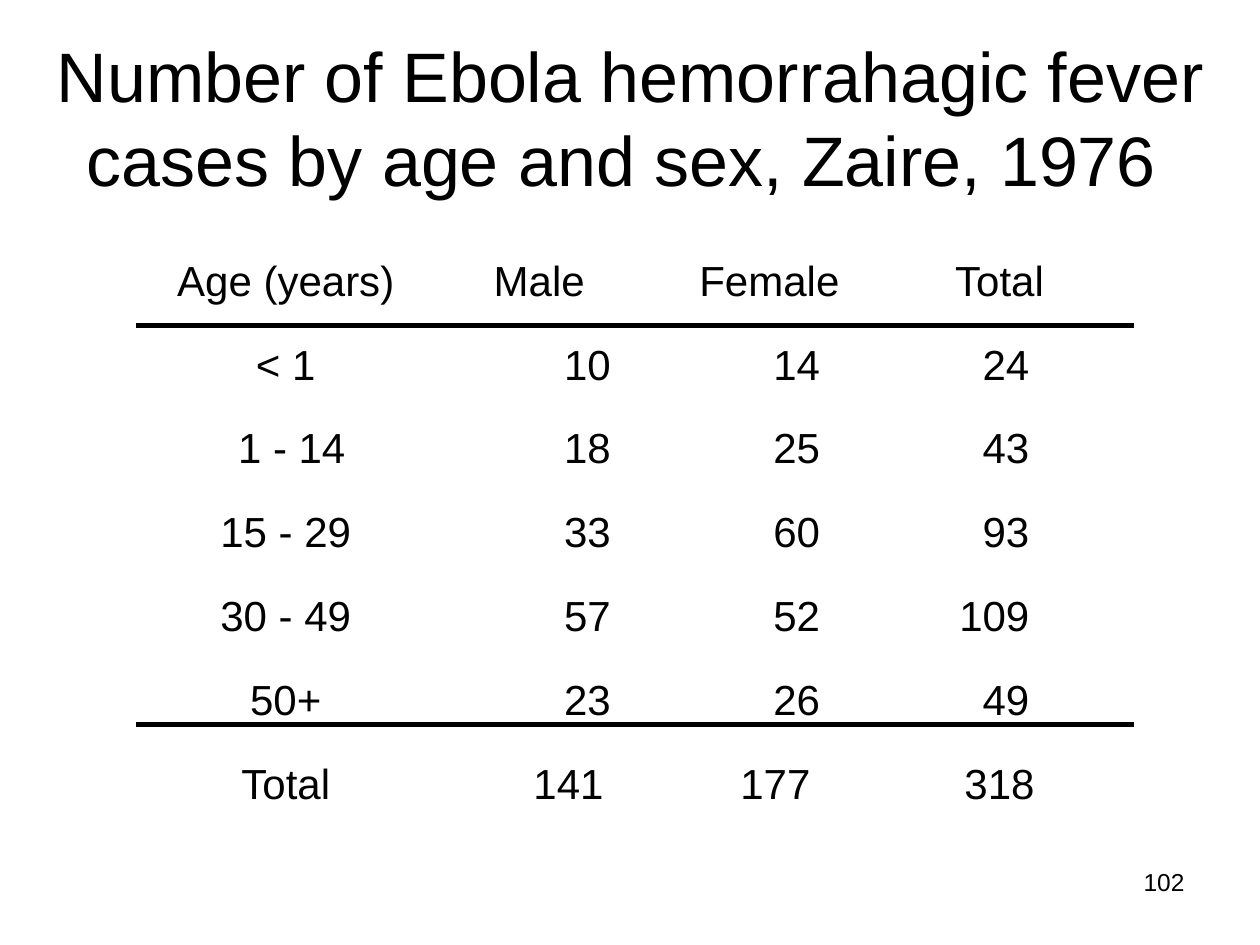
from lxml.etree import SubElement
from pptx import Presentation
from pptx.dml.color import RGBColor
from pptx.enum.shapes import MSO_CONNECTOR as Connector
from pptx.enum.text import MSO_ANCHOR as Anchor, PP_ALIGN as Align
from pptx.oxml.ns import qn
from pptx.util import Cm, Pt

COLOURS = {"ink": "000000", "paper": "FFFFFF"}

HEADINGS = ["Age (years)", "Male", "Female", "Total"]
CASES = [
    ["< 1", "10", "14", "24"],
    ["1 - 14", "18", "25", "43"],
    ["15 - 29", "33", "60", "93"],
    ["30 - 49", "57", "52", "109"],
    ["50+", "23", "26", "49"],
]
TOTALS = ["Total", "141", "177", "318"]

# Table measures in cm
AGE_WIDTH, COUNT_WIDTH, ROW_HEIGHT = 5.16, 4.64, 1.69
MARGIN, STEP = 0.25, 0.42
# Extra left indents, by row and column
INDENTS = {(2, 0): 0.24, (6, 1): 1.18, (6, 2): 0.24}


class SlideBuilder:
    font = "Arial"

    def __init__(self, page):
        self.page = page
        page.background.fill.solid()
        page.background.fill.fore_color.rgb = self.colour("paper")

    def colour(self, name):
        return RGBColor.from_string(COLOURS[name])

    def add_span(self, para, text, size, align):
        para.alignment = align
        span = para.add_run()
        span.text = text
        span.font.name = self.font
        span.font.size = Pt(size)
        span.font.color.rgb = self.colour("ink")

    def title(self, text, left, top, width, height):
        box = self.page.shapes.title
        box.left, box.top = Cm(left), Cm(top)
        box.width, box.height = Cm(width), Cm(height)
        box.text_frame.vertical_anchor = Anchor.MIDDLE
        para = box.text_frame.paragraphs[0]
        self.add_span(para, text, 40, Align.CENTER)
        self.add_span(para, " ", 36, Align.CENTER)

    def text(self, text, left, top, width, height, size, align):
        box = self.page.shapes.add_textbox(Cm(left), Cm(top), Cm(width), Cm(height))
        box.text_frame.word_wrap = True
        self.add_span(box.text_frame.paragraphs[0], text, size, align)

    def table(self, rows, left, top):
        widths = [AGE_WIDTH] + [COUNT_WIDTH] * (len(rows[0]) - 1)
        frame = self.page.shapes.add_table(
            len(rows), len(widths), Cm(left), Cm(top),
            Cm(sum(widths)), Cm(ROW_HEIGHT * len(rows)))
        table = frame.table
        table.first_row = table.horz_banding = False
        for column, width in zip(table.columns, widths):
            column.width = Cm(width)
        for row_index, values in enumerate(rows):
            table.rows[row_index].height = Cm(ROW_HEIGHT)
            is_body = 0 < row_index < len(rows) - 1
            for column_index, value in enumerate(values):
                cell = table.cell(row_index, column_index)
                cell.fill.background()
                cell.vertical_anchor = Anchor.TOP
                left_margin = right_margin = MARGIN
                align = Align.CENTER
                if column_index and is_body:
                    # Counts sit further from the column edge, step by step
                    align = Align.RIGHT
                    right_margin += STEP * column_index
                elif column_index:
                    left_margin += STEP
                left_margin += INDENTS.get((row_index, column_index), 0)
                cell.margin_left, cell.margin_right = Cm(left_margin), Cm(right_margin)
                self.add_span(cell.text_frame.paragraphs[0], value, 24, align)

    def rule(self, left, right, height):
        line = self.page.shapes.add_connector(
            Connector.STRAIGHT, Cm(left), Cm(height), Cm(right), Cm(height))
        line.line.color.rgb = self.colour("ink")
        line.line.width = Pt(3)
        SubElement(line.element.spPr, qn("a:effectLst"))


def main():
    deck = Presentation()
    deck.slide_width, deck.slide_height = Cm(25.4), Cm(19.05)
    builder = SlideBuilder(deck.slides.add_slide(deck.slide_layouts[5]))

    # Title
    builder.title("Number of Ebola hemorrahagic fever cases by age and sex, Zaire, 1976",
                  0.42, 0.76, 24.56, 3.18)

    # Case table with its two rules
    builder.table([HEADINGS] + CASES + [TOTALS], 3.18, 5.08)
    for height in (6.56, 14.6):
        builder.rule(2.75, 22.86, height)

    # Page number
    builder.text("102", 18.2, 17.36, 5.93, 1.32, 14, Align.RIGHT)

    deck.save("out.pptx")


if __name__ == "__main__":
    main()
